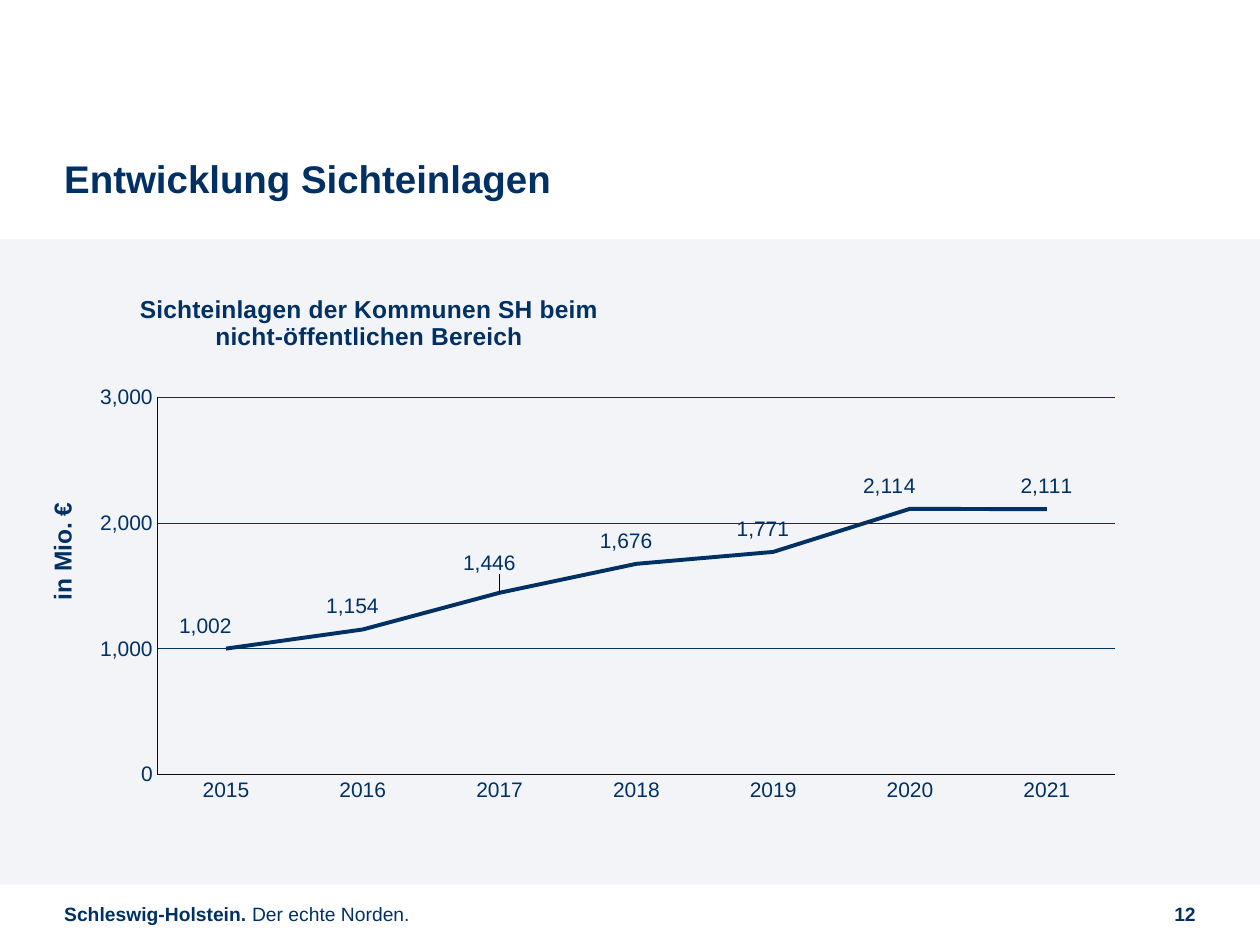
from lxml.etree import SubElement
from pptx import Presentation
from pptx.chart.data import CategoryChartData
from pptx.dml.color import RGBColor
from pptx.enum.chart import XL_CHART_TYPE, XL_LABEL_POSITION, XL_MARKER_STYLE, XL_TICK_MARK
from pptx.enum.shapes import MSO_SHAPE
from pptx.enum.text import MSO_ANCHOR, PP_ALIGN
from pptx.oxml.ns import qn
from pptx.util import Inches, Pt

NAVY = RGBColor(0x00, 0x30, 0x64)
BLACK = RGBColor(0x0D, 0x0D, 0x0D)
PALE = RGBColor(0xF2, 0xF4, 0xF7)
FONT = "Arial"
WIDTH, HEIGHT = Inches(10), Inches(7.5)

DATA = {"2015": 1002, "2016": 1154, "2017": 1446, "2018": 1676,
        "2019": 1771, "2020": 2114, "2021": 2111}
SHIFTS = [(-0.02, -0.01), (-0.01, -0.01), (-0.01, -0.02), (-0.01, -0.01),
          (-0.01, -0.01), (-0.02, -0.01), (0, -0.01)]


def style(font, size, bold=False):
    font.name, font.size, font.bold = FONT, Pt(size), bold
    font.color.rgb = NAVY


def place(node, index, **parts):
    for old in node.findall(qn("c:layout")):
        node.remove(old)
    layout = SubElement(node, qn("c:layout"))
    manual = SubElement(layout, qn("c:manualLayout"))
    for tag, val in parts.items():
        SubElement(manual, qn(f"c:{tag}")).set("val", str(val))
    node.insert(index, layout)


class Page:
    def __init__(self, deck):
        self.slide = deck.slides.add_slide(deck.slide_layouts[5])
        self.shapes = self.slide.shapes

    def box(self, x, y, w, h):
        return round(x * WIDTH), round(y * HEIGHT), round(w * WIDTH), round(h * HEIGHT)

    def band(self, *area):
        shape = self.shapes.add_shape(MSO_SHAPE.RECTANGLE, *self.box(*area))
        shape.shadow.inherit = False
        shape.fill.solid()
        shape.fill.fore_color.rgb = PALE
        shape.line.fill.background()

    def label(self, shape, runs, size, align=PP_ALIGN.LEFT, anchor=MSO_ANCHOR.MIDDLE, wrap=False):
        frame = shape.text_frame
        frame.margin_left = frame.margin_right = frame.margin_top = frame.margin_bottom = 0
        frame.vertical_anchor, frame.word_wrap = anchor, wrap
        para = frame.paragraphs[0]
        para.alignment = align
        style(para.font, size, True)
        for text, bold in runs:
            run = para.add_run()
            run.text, run.font.bold = text, bold

    def title(self, text, *area):
        shape = self.shapes.title
        shape.left, shape.top, shape.width, shape.height = self.box(*area)
        self.label(shape, [(text, True)], 22, anchor=MSO_ANCHOR.BOTTOM, wrap=True)

    def text(self, runs, size, *area, align=PP_ALIGN.LEFT, turn=0):
        shape = self.shapes.add_textbox(*self.box(*area))
        shape.rotation = turn
        self.label(shape, runs, size, align)

    def axis(self, axis):
        axis.major_tick_mark = axis.minor_tick_mark = XL_TICK_MARK.NONE
        style(axis.tick_labels.font, 12)
        axis.format.line.color.rgb = BLACK
        axis.format.line.width = Pt(0.75)

    def chart(self, lines, *area):
        data = CategoryChartData(number_format="#,##0")
        data.categories = list(DATA)
        data.add_series("Sichteinlagen", list(DATA.values()))
        chart = self.shapes.add_chart(XL_CHART_TYPE.LINE, *self.box(*area), data).chart
        chart.has_legend = False
        style(chart.font, 10)

        frame = chart.chart_title.text_frame
        for i, line in enumerate(lines):
            para = frame.add_paragraph() if i else frame.paragraphs[0]
            para.text, para.alignment = line, PP_ALIGN.CENTER
            style(para.font, 14, True)

        self.axis(chart.category_axis)
        value = chart.value_axis
        self.axis(value)
        value.minimum_scale, value.maximum_scale, value.major_unit = 0, 3000, 1000
        value.tick_labels.number_format = "#,##0"
        value.tick_labels.number_format_is_linked = False
        grid = value.major_gridlines.format.line
        grid.color.rgb, grid.width = NAVY, Pt(0.75)

        plot = chart.plots[0]
        plot.vary_by_categories = False
        series = plot.series[0]
        series.smooth = False
        series.marker.style = XL_MARKER_STYLE.NONE
        series.format.line.color.rgb = NAVY
        series.format.line.width = Pt(2.25)
        for i in range(len(DATA)):
            label = series.points[i].data_label
            style(label.font, 12)
            label.position = XL_LABEL_POSITION.ABOVE

        root = chart.element
        place(next(root.iter(qn("c:title"))), 1, xMode="edge", yMode="edge", x=0.05, y=0.1)
        place(next(root.iter(qn("c:plotArea"))), 0, layoutTarget="inner", xMode="edge",
              yMode="edge", x=0.071, y=0.265, w=0.928, h=0.576)
        for node, (x, y) in zip(root.iter(qn("c:dLbl")), SHIFTS):
            place(node, 1, x=x, y=y)


def main():
    deck = Presentation()
    deck.slide_width, deck.slide_height = WIDTH, HEIGHT
    page = Page(deck)
    page.band(0, 0.253, 1, 0.683)
    page.title("Entwicklung Sichteinlagen", 0.051, 0.08, 0.654, 0.133)
    page.chart(["Sichteinlagen der Kommunen SH beim", "nicht-öffentlichen Bereich"],
               0.067, 0.237, 0.819, 0.693)
    page.text([("in Mio. €", True)], 14, -0.026, 0.561, 0.15, 0.045,
              align=PP_ALIGN.CENTER, turn=270)
    page.text([("Schleswig-Holstein.", True), (" Der echte Norden.", False)], 11,
              0.051, 0.947, 0.323, 0.039)
    page.text([("12", True)], 11, 0.87, 0.947, 0.079, 0.039, align=PP_ALIGN.RIGHT)
    deck.save("out.pptx")


if __name__ == "__main__":
    main()
